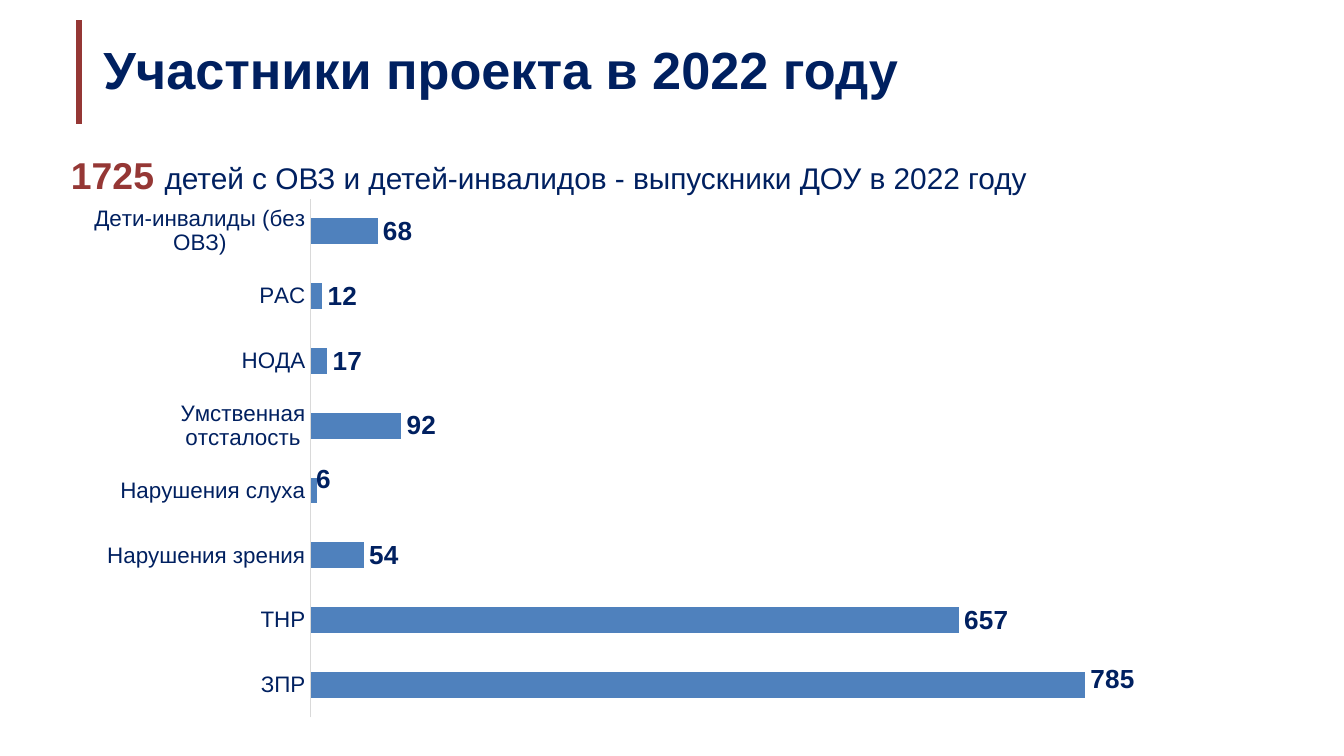
from lxml import etree
from pptx import Presentation
from pptx.chart.data import CategoryChartData
from pptx.dml.color import RGBColor
from pptx.enum.chart import XL_CHART_TYPE, XL_LABEL_POSITION, XL_TICK_LABEL_POSITION, XL_TICK_MARK
from pptx.enum.shapes import MSO_CONNECTOR
from pptx.enum.text import MSO_ANCHOR, MSO_AUTO_SIZE, PP_ALIGN
from pptx.oxml import parse_xml
from pptx.oxml.ns import nsdecls, qn
from pptx.util import Inches, Pt

NAVY = RGBColor(0x00, 0x20, 0x60)
RED = RGBColor(0x95, 0x37, 0x35)
BLUE = RGBColor(0x4F, 0x81, 0xBD)
GREY = RGBColor(0xD9, 0xD9, 0xD9)
FONT = "Arial"

PARTICIPANTS = [
    ("ЗПР", 785),
    ("ТНР", 657),
    ("Нарушения зрения", 54),
    ("Нарушения слуха", 6),
    ("Умственная отсталость", 92),
    ("НОДА", 17),
    ("РАС", 12),
    ("Дети-инвалиды (без ОВЗ)", 68),
]
# Labels moved from their usual place: point index -> shift as a share of the chart
LABEL_SHIFTS = {0: (0, -0.01), 3: (-0.005, -0.02)}


def style(font, size, color=NAVY, bold=False):
    font.name = FONT
    font.size = Pt(size)
    font.bold = bold
    font.color.rgb = color


def add_title(page, text):
    title = page.shapes.title
    title.left, title.top = Inches(0.67), Inches(0.37)
    title.width, title.height = Inches(8.82), Inches(0.28)
    frame = title.text_frame
    frame.text = text
    frame.auto_size = MSO_AUTO_SIZE.NONE
    frame.vertical_anchor = MSO_ANCHOR.MIDDLE
    paragraph = frame.paragraphs[0]
    paragraph.alignment = PP_ALIGN.LEFT
    style(paragraph.runs[0].font, 28, bold=True)


def add_accent_line(page):
    x = Inches(0.59)
    line = page.shapes.add_connector(MSO_CONNECTOR.STRAIGHT, x, Inches(0.15), x, Inches(0.92))
    line.line.color.rgb = RED
    line.line.width = Pt(3)
    etree.SubElement(line._element.spPr, qn("a:effectLst"))


def add_summary(page, total, description):
    box = page.shapes.add_textbox(Inches(0.43), Inches(1.08), Inches(8.96), Inches(0.44))
    frame = box.text_frame
    frame.word_wrap = True
    frame.auto_size = MSO_AUTO_SIZE.SHAPE_TO_FIT_TEXT
    paragraph = frame.paragraphs[0]
    for text, size, color, bold in ((total, 20, RED, True), (description, 16, NAVY, False)):
        span = paragraph.add_run()
        span.text = text
        style(span.font, size, color, bold)


def manual_layout(**values):
    items = "".join(f'<c:{name} val="{value}"/>' for name, value in values.items())
    return parse_xml(f'<c:layout {nsdecls("c")}><c:manualLayout>{items}</c:manualLayout></c:layout>')


def set_plot_area(chart):
    area = chart._chartSpace.chart.plotArea
    for layout in area.findall(qn("c:layout")):
        area.remove(layout)
    area.insert(0, manual_layout(layoutTarget="inner", xMode="edge", yMode="edge",
                                 x=0.21, y=0.02, w=0.77, h=0.96))


def style_axes(chart):
    categories = chart.category_axis
    categories.major_tick_mark = XL_TICK_MARK.NONE
    categories.minor_tick_mark = XL_TICK_MARK.NONE
    categories.tick_label_position = XL_TICK_LABEL_POSITION.NEXT_TO_AXIS
    categories.format.line.color.rgb = GREY
    categories.format.line.width = Pt(0.75)
    style(categories.tick_labels.font, 12)
    values = chart.value_axis
    values.minimum_scale, values.maximum_scale = 0, 900
    values.has_major_gridlines = False
    values.visible = False


def style_labels(series):
    labels = series.data_labels
    labels.show_value = True
    labels.number_format = "0"
    labels.number_format_is_linked = False
    labels.position = XL_LABEL_POSITION.OUTSIDE_END
    style(labels.font, 14, bold=True)
    for index, (x, y) in LABEL_SHIFTS.items():
        label = series.points[index].data_label
        label.position = XL_LABEL_POSITION.OUTSIDE_END
        style(label.font, 14, bold=True)
        element = series._element.xpath(f'c:dLbls/c:dLbl[c:idx/@val="{index}"]')[0]
        element.insert(1, manual_layout(x=x, y=y))


def add_participants_chart(page):
    data = CategoryChartData(number_format="0")
    names, counts = zip(*PARTICIPANTS)
    data.categories = names
    data.add_series("Series 1", counts)
    chart = page.shapes.add_chart(XL_CHART_TYPE.BAR_CLUSTERED, Inches(0.51), Inches(1.4),
                                  Inches(8.58), Inches(4.02), data).chart
    chart.has_legend = False
    chart.has_title = False
    style(chart.font, 10)
    plot = chart.plots[0]
    plot.gap_width = 150
    plot.vary_by_categories = False
    series = plot.series[0]
    series.format.fill.solid()
    series.format.fill.fore_color.rgb = BLUE
    set_plot_area(chart)
    style_axes(chart)
    style_labels(series)


def main():
    deck = Presentation()
    # 16:9 page
    deck.slide_width = Inches(10)
    deck.slide_height = deck.slide_width * 9 // 16
    page = deck.slides.add_slide(deck.slide_layouts[5])

    # Heading
    add_title(page, "Участники проекта в 2022 году")
    add_accent_line(page)

    # Participants by group, with the total above
    add_participants_chart(page)
    add_summary(page, "1725 ", "детей с ОВЗ и детей-инвалидов - выпускники ДОУ в 2022 году")

    deck.save("out.pptx")


if __name__ == "__main__":
    main()
